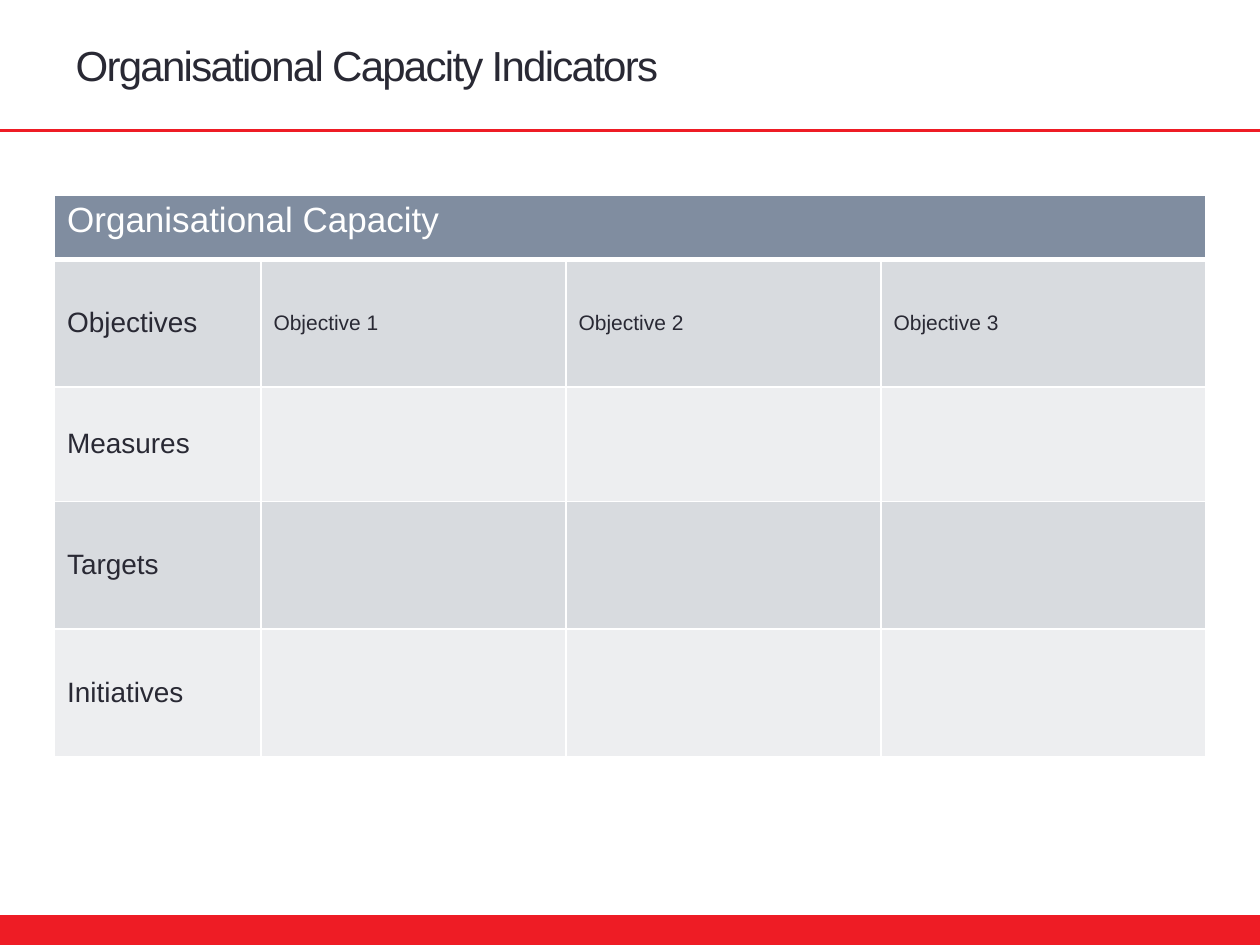
"""Build the Organisational Capacity Indicators slide with its scorecard table."""
import dataclasses

import lxml.etree
import pptx
import pptx.dml.color
import pptx.enum.shapes
import pptx.enum.text
import pptx.oxml.ns
import pptx.util
from pptx.util import Cm, Pt

TITLE = "Organisational Capacity Indicators"
SCORECARD = [
    ["Organisational Capacity", "", "", ""],
    ["Objectives", "Objective 1", "Objective 2", "Objective 3"],
    ["Measures", "", "", ""],
    ["Targets", "", "", ""],
    ["Initiatives", "", "", ""],
]
COLUMN_WIDTHS = [4.16, 6.15, 6.35, 6.55]
ROW_HEIGHTS = [1.3, 2.57, 2.31, 2.57, 2.57]
SLIDE_WIDTH, SLIDE_HEIGHT = 25.4, 19.05
FOOTER_HEIGHT = 0.6
RULE_TOP = 2.63


@dataclasses.dataclass(frozen=True)
class Theme:
    """Colours, font and type sizes."""
    font: str = "Arial"
    ink: str = "292934"
    white: str = "FFFFFF"
    accent: str = "EE1C25"
    header: str = "808DA0"
    bands: tuple = ("D8DBDF", "EDEEF0")
    title_size: int = 24
    header_size: int = 20
    label_size: int = 16
    body_size: int = 12


THEME = Theme()


def rgb(colour):
    """Return a colour object for a hex value."""
    return pptx.dml.color.RGBColor.from_string(colour)


def style_font(paragraph, size, colour):
    """Give a paragraph the theme font."""
    font = paragraph.font
    font.name, font.size, font.bold = THEME.font, Pt(size), False
    font.color.rgb = rgb(colour)


def add_border(cell, side, width):
    """Draw one white cell border."""
    qn = pptx.oxml.ns.qn
    border = lxml.etree.SubElement(
        cell._tc.get_or_add_tcPr(), qn(f"a:ln{side}"), w=str(Pt(width)))
    fill = lxml.etree.SubElement(border, qn("a:solidFill"))
    lxml.etree.SubElement(fill, qn("a:srgbClr"), val=THEME.white)


def add_title(slide):
    """Place and format the title."""
    title = slide.shapes.title
    title.left, title.top, title.width, title.height = Cm(1.27), Cm(0.38), Cm(17.63), Cm(1.83)
    frame = title.text_frame
    frame.text = TITLE
    frame.margin_top = frame.margin_bottom = 0
    frame.vertical_anchor = pptx.enum.text.MSO_ANCHOR.MIDDLE
    heading = frame.paragraphs[0]
    heading.alignment = pptx.enum.text.PP_ALIGN.LEFT
    style_font(heading, THEME.title_size, THEME.ink)
    heading.runs[0]._r.get_or_add_rPr().set("spc", "-100")


def add_frame(slide):
    """Add the red footer bar and the rule under the title."""
    footer = slide.shapes.add_shape(
        pptx.enum.shapes.MSO_SHAPE.RECTANGLE, 0, Cm(SLIDE_HEIGHT - FOOTER_HEIGHT),
        Cm(SLIDE_WIDTH), Cm(FOOTER_HEIGHT))
    footer.shadow.inherit = False
    footer.fill.solid()
    footer.fill.fore_color.rgb = rgb(THEME.accent)
    footer.line.fill.background()
    rule = slide.shapes.add_connector(
        pptx.enum.shapes.MSO_CONNECTOR.STRAIGHT, 0, Cm(RULE_TOP), Cm(SLIDE_WIDTH), Cm(RULE_TOP))
    rule.line.color.rgb = rgb(THEME.accent)
    rule.line.width = Pt(1.5)
    lxml.etree.SubElement(rule._element.spPr, pptx.oxml.ns.qn("a:effectLst"))


def style_cell(cell, text, row, column):
    """Fill, border and write one scorecard cell."""
    is_header = row == 0
    for side in "LRTB":
        add_border(cell, side, 3 if is_header and side == "B" else 1)
    cell.fill.solid()
    cell.fill.fore_color.rgb = rgb(THEME.header if is_header else THEME.bands[(row - 1) % 2])
    if not is_header:
        cell.vertical_anchor = pptx.enum.text.MSO_ANCHOR.MIDDLE
    if text:
        cell.text = text
        label_size = THEME.header_size if is_header else THEME.label_size
        style_font(cell.text_frame.paragraphs[0],
                   THEME.body_size if column else label_size,
                   THEME.white if is_header else THEME.ink)


def add_scorecard(slide):
    """Add the table of objectives, measures, targets and initiatives."""
    scorecard = slide.shapes.add_table(
        len(ROW_HEIGHTS), len(COLUMN_WIDTHS), Cm(1.1), Cm(3.93),
        Cm(sum(COLUMN_WIDTHS)), Cm(sum(ROW_HEIGHTS))).table
    for column, width in zip(scorecard.columns, COLUMN_WIDTHS):
        column.width = Cm(width)
    for row, height in zip(scorecard.rows, ROW_HEIGHTS):
        row.height = Cm(height)
    scorecard.cell(0, 0).merge(scorecard.cell(0, len(COLUMN_WIDTHS) - 1))
    for row, texts in enumerate(SCORECARD):
        for column, text in enumerate(texts):
            style_cell(scorecard.cell(row, column), text, row, column)


def main():
    """Build and save the slide."""
    deck = pptx.Presentation()
    deck.slide_width, deck.slide_height = Cm(SLIDE_WIDTH), Cm(SLIDE_HEIGHT)
    slide = deck.slides.add_slide(deck.slide_layouts.get_by_name("Title Only"))
    add_frame(slide)
    add_title(slide)
    add_scorecard(slide)
    deck.save("out.pptx")


if __name__ == "__main__":
    main()
